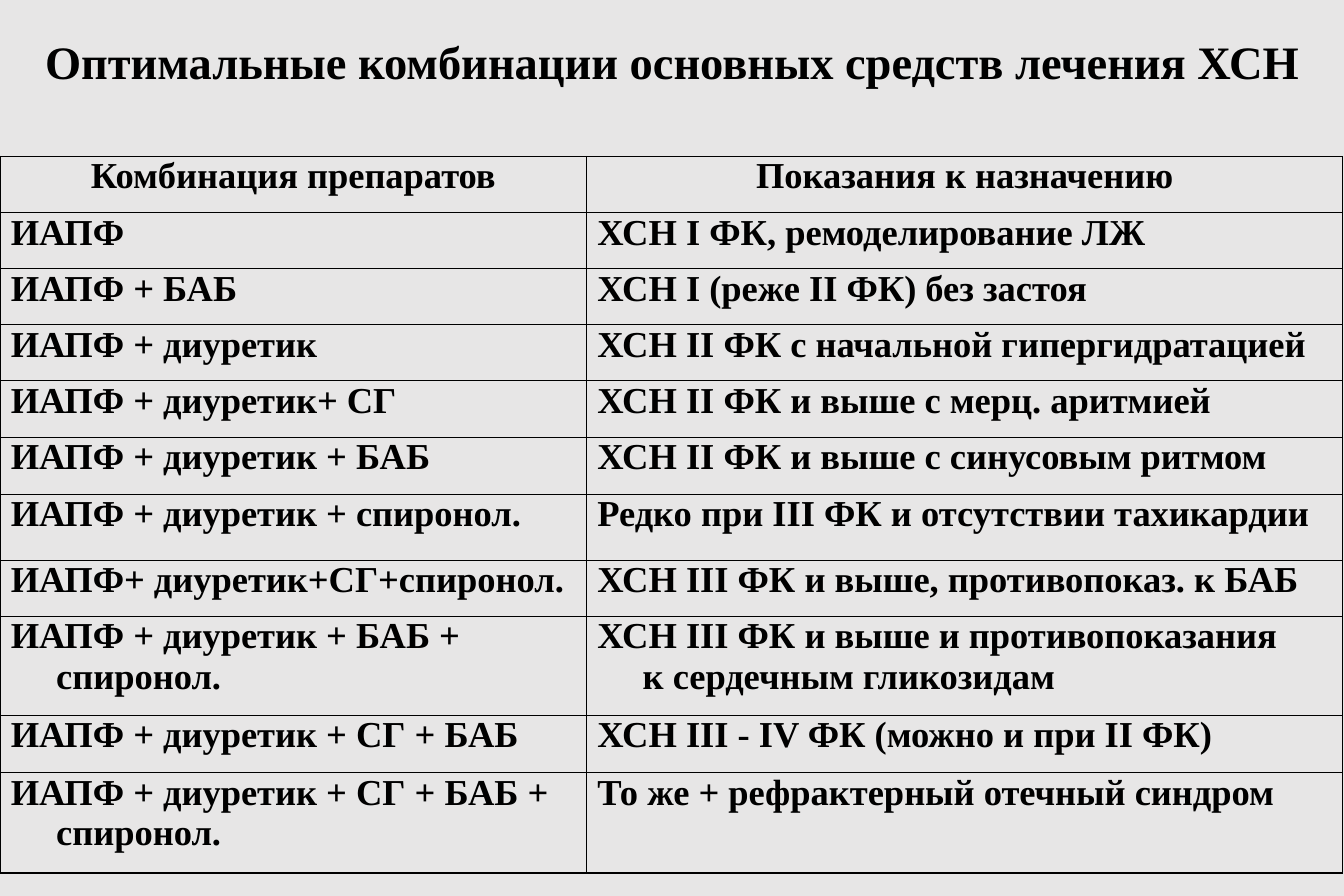
from lxml.etree import SubElement
from pptx import Presentation
from pptx.dml.color import RGBColor
from pptx.enum.text import PP_ALIGN as Align
from pptx.oxml.ns import qn
from pptx.util import Inches, Pt

TITLE = "Оптимальные комбинации основных средств лечения ХСН"
HEADERS = ("Комбинация препаратов", "Показания к назначению")
TREATMENTS = [
    ("ИАПФ", "ХСН I ФК, ремоделирование ЛЖ"),
    ("ИАПФ + БАБ", "ХСН I (реже II ФК) без застоя"),
    ("ИАПФ + диуретик", "ХСН II ФК с начальной гипергидратацией"),
    ("ИАПФ + диуретик+ СГ", "ХСН II ФК и выше с мерц. аритмией"),
    ("ИАПФ + диуретик + БАБ", "ХСН II ФК и выше с синусовым ритмом"),
    ("ИАПФ + диуретик + спиронол.", "Редко при III ФК и отсутствии тахикардии"),
    ("ИАПФ+ диуретик+СГ+спиронол.", "ХСН III ФК и выше, противопоказ. к БАБ"),
    ("ИАПФ + диуретик + БАБ + спиронол.",
     "ХСН III ФК и выше и противопоказания к сердечным гликозидам"),
    ("ИАПФ + диуретик + СГ + БАБ", "ХСН III - IV ФК (можно и при II ФК)"),
    ("ИАПФ + диуретик + СГ + БАБ + спиронол.", "То же + рефрактерный отечный синдром"),
]
WRAP_MARGINS = {(8, 0): 0, (8, 1): 0.4, (10, 0): 0}

BACKGROUND = RGBColor(0xE7, 0xE6, 0xE6)
BLACK = RGBColor(0, 0, 0)
FONT = "Times New Roman"
WIDTH, HEIGHT = 11.25, 7.5
TABLE_TOP = 1.31
COLUMNS = (4.91, 6.33)
ROW = 0.47
TALL_ROWS = {5: 0.48, 6: 0.55, 8: 0.83, 9: 0.48, 10: 0.84}
INDENT, HANGING = 0.09, 0.38


def write(frame, text, size, align):
    paragraph = frame.paragraphs[0]
    paragraph.text = text
    paragraph.alignment = align
    font = paragraph.font
    font.name, font.size, font.bold = FONT, Pt(size), True
    font.color.rgb = BLACK
    return paragraph


def clear_margins(box):
    box.margin_left = box.margin_right = 0
    box.margin_top = box.margin_bottom = 0


def outline(cell):
    properties = cell._tc.get_or_add_tcPr()
    for side in ("lnL", "lnR", "lnT", "lnB"):
        line = SubElement(properties, qn(f"a:{side}"), w=str(Pt(0.75)))
        SubElement(SubElement(line, qn("a:solidFill")), qn("a:srgbClr"), val=str(BLACK))


def main():
    deck = Presentation()
    deck.slide_width, deck.slide_height = Inches(WIDTH), Inches(HEIGHT)
    slide = deck.slides.add_slide(deck.slide_layouts[6])
    slide.background.fill.solid()
    slide.background.fill.fore_color.rgb = BACKGROUND

    heading = slide.shapes.add_textbox(
        Inches(0.36), Inches(0.28), Inches(WIDTH - 0.72), Inches(ROW)).text_frame
    clear_margins(heading)
    write(heading, TITLE, 28, Align.CENTER)

    rows = [HEADERS, *TREATMENTS]
    heights = [TALL_ROWS.get(index, ROW) for index in range(len(rows))]
    table = slide.shapes.add_table(
        len(rows), len(COLUMNS), 0, Inches(TABLE_TOP),
        Inches(sum(COLUMNS)), Inches(sum(heights))).table
    table.first_row = table.horz_banding = False
    for column, width in zip(table.columns, COLUMNS):
        column.width = Inches(width)
    for row, height in zip(table.rows, heights):
        row.height = Inches(height)

    for r, texts in enumerate(rows):
        for c, text in enumerate(texts):
            cell = table.cell(r, c)
            outline(cell)
            cell.fill.background()
            clear_margins(cell)
            paragraph = write(cell.text_frame, text, 22, Align.LEFT if r else Align.CENTER)
            if r:
                hang = HANGING if (r, c) in WRAP_MARGINS else 0
                layout = paragraph._p.get_or_add_pPr()
                layout.set("marL", str(Inches(INDENT + hang)))
                layout.set("indent", str(Inches(-hang)))
                cell.margin_right = Inches(WRAP_MARGINS.get((r, c), 0))

    deck.save("out.pptx")


if __name__ == "__main__":
    main()
